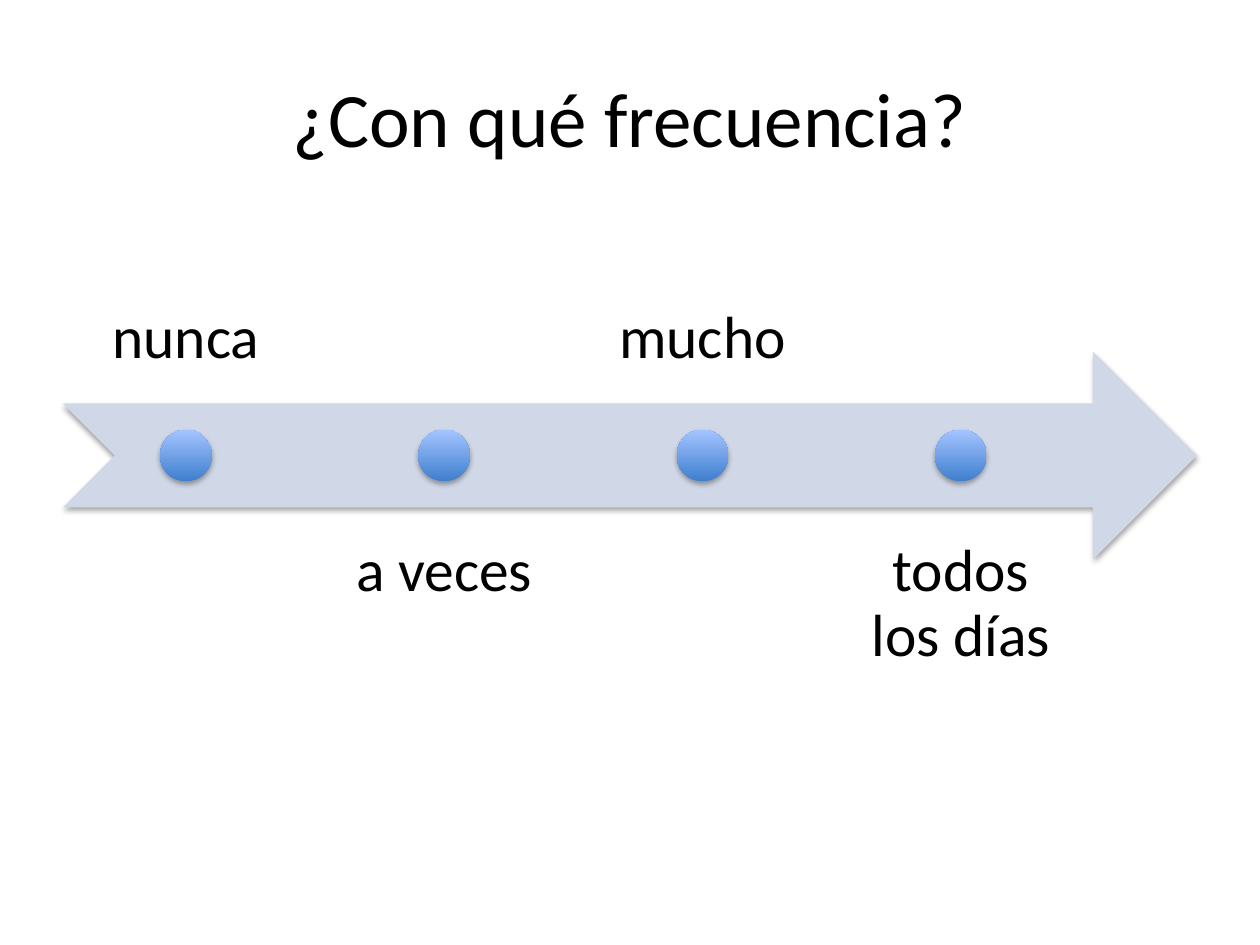
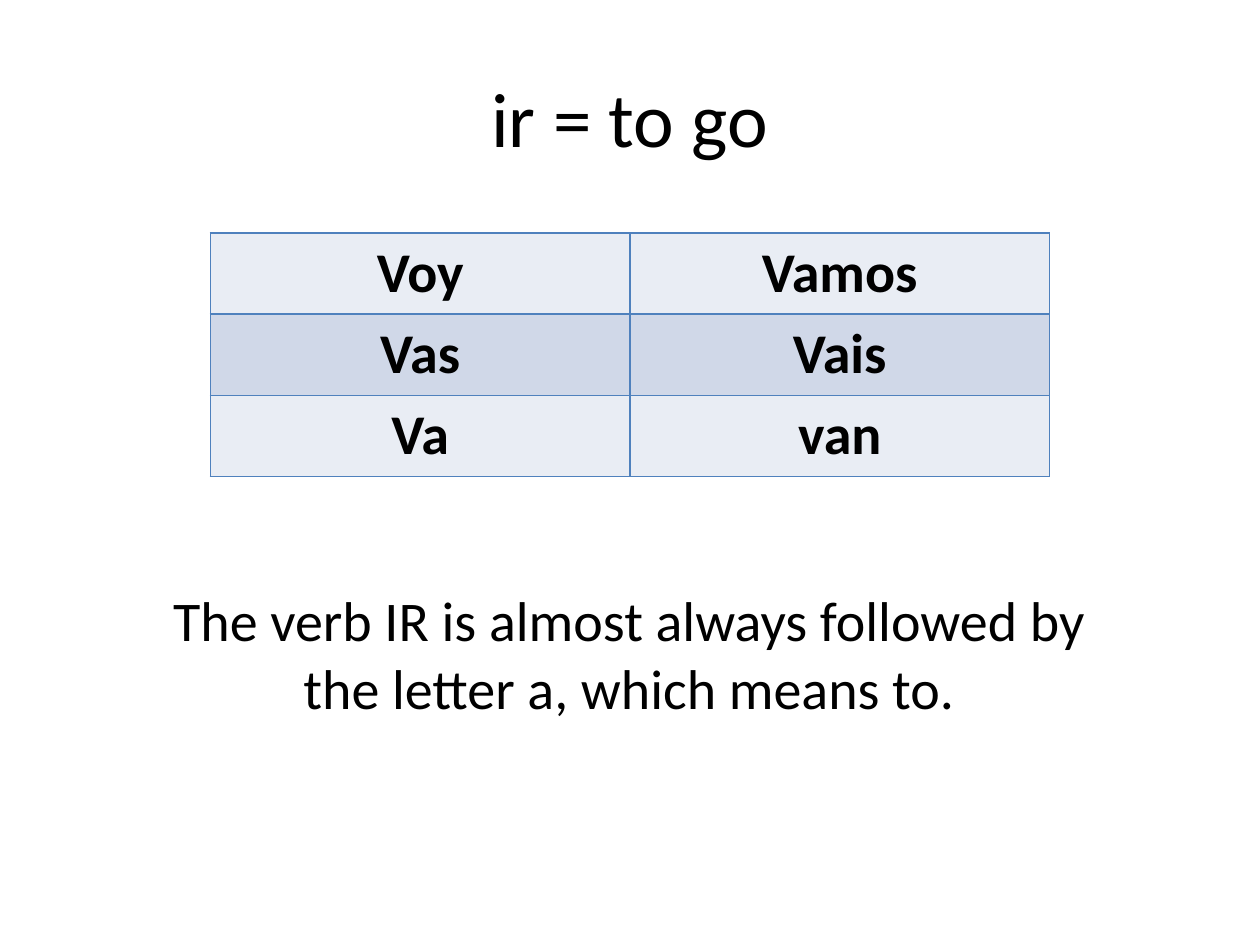
"""Build two Spanish lesson slides: a frequency scale and the verb ir."""
from dataclasses import dataclass

from lxml.etree import SubElement
from pptx import Presentation
from pptx.dml.color import RGBColor
from pptx.enum.shapes import MSO_SHAPE
from pptx.enum.text import MSO_ANCHOR, PP_ALIGN
from pptx.oxml.ns import qn
from pptx.util import Inches, Pt


@dataclass(frozen=True)
class Theme:
    font: str = "Calibri"
    text: str = "000000"
    background: str = "FFFFFF"
    band_dark: str = "D0D8E8"
    band_light: str = "E9EDF4"
    border: str = "4F81BD"
    dot_bottom: str = "3F7FCE"
    dot_top: str = "A4C4FF"
    title_size: int = 44
    label_size: int = 34
    body_size: int = 32


@dataclass(frozen=True)
class Box:
    left: float
    top: float
    width: float
    height: float

    def lengths(self) -> tuple:
        return tuple(Inches(side) for side in (self.left, self.top, self.width, self.height))


@dataclass(frozen=True)
class Frequency:
    label: str
    above: bool


THEME = Theme()
TITLE_BOX = Box(0.5, 0.3, 9, 1.25)
ARROW_BOX = Box(0.5, 2.79, 9, 1.65)
NOTE_BOX = Box(1.21, 4.6, 7.57, 1.18)
LABEL_WIDTH, LABEL_STEP, LABEL_INSET = 1.95, 2.05, 0.26
LABEL_TOP_ABOVE, LABEL_TOP_BELOW = 1.55, 4.03
DOT_SIZE = 0.41
TABLE_LEFT, TABLE_TOP = 1.67, 1.85
COLUMN_WIDTH, ROW_HEIGHT = 3.33, 0.64

FREQUENCIES = [
    Frequency("nunca", True),
    Frequency("a veces", False),
    Frequency("mucho", True),
    Frequency("todos los días", False),
]
VERB_FORMS = [("Voy", "Vamos"), ("Vas", "Vais"), ("Va", "van")]


def color(value: str) -> RGBColor:
    return RGBColor.from_string(value)


def write_text(text_frame, text: str, size: int, bold: bool = False):
    """Set centred text in the theme font and return its paragraph."""
    text_frame.text = text
    text_frame.word_wrap = True
    paragraph = text_frame.paragraphs[0]
    paragraph.alignment = PP_ALIGN.CENTER
    for run in paragraph.runs:
        run.font.name = THEME.font
        run.font.size = Pt(size)
        run.font.bold = bold
        run.font.color.rgb = color(THEME.text)
    return paragraph


def add_titled_slide(presentation, title: str):
    """Add a white slide with a formatted title."""
    slide = presentation.slides.add_slide(presentation.slide_layouts[5])
    slide.background.fill.solid()
    slide.background.fill.fore_color.rgb = color(THEME.background)
    shape = slide.shapes.title
    shape.left, shape.top, shape.width, shape.height = TITLE_BOX.lengths()
    write_text(shape.text_frame, title, THEME.title_size)
    shape.text_frame.vertical_anchor = MSO_ANCHOR.MIDDLE
    return slide


def add_shadowed_shape(slide, kind: MSO_SHAPE, box: Box):
    """Add an outline-free shape with a soft shadow below it."""
    shape = slide.shapes.add_shape(kind, *box.lengths())
    shape.line.fill.background()
    shape.shadow.inherit = False
    effects = shape.element.spPr.find(qn("a:effectLst"))
    shadow = SubElement(effects, qn("a:outerShdw"), blurRad=str(Pt(3.1)),
                        dist=str(Pt(1.8)), dir="5400000", rotWithShape="0")
    shade = SubElement(shadow, qn("a:srgbClr"), val=THEME.text)
    SubElement(shade, qn("a:alpha"), val="35000")
    return shape


def add_frequency(slide, index: int, frequency: Frequency) -> None:
    """Add a label and its dot on the arrow."""
    left = ARROW_BOX.left + index * LABEL_STEP
    top = LABEL_TOP_ABOVE if frequency.above else LABEL_TOP_BELOW
    label_box = Box(left, top, LABEL_WIDTH, ARROW_BOX.height)
    text_frame = slide.shapes.add_textbox(*label_box.lengths()).text_frame
    text_frame.margin_left = text_frame.margin_right = Inches(LABEL_INSET)
    text_frame.margin_top = text_frame.margin_bottom = Inches(LABEL_INSET)
    text_frame.vertical_anchor = MSO_ANCHOR.BOTTOM if frequency.above else MSO_ANCHOR.TOP
    write_text(text_frame, frequency.label, THEME.label_size).line_spacing = 0.9

    dot_box = Box(left + (LABEL_WIDTH - DOT_SIZE) / 2,
                  ARROW_BOX.top + (ARROW_BOX.height - DOT_SIZE) / 2, DOT_SIZE, DOT_SIZE)
    dot = add_shadowed_shape(slide, MSO_SHAPE.OVAL, dot_box)
    dot.fill.gradient()
    dot.fill.gradient_angle = 90
    for stop, value in zip(dot.fill.gradient_stops, (THEME.dot_bottom, THEME.dot_top)):
        stop.color.rgb = color(value)


def add_cell_borders(cell) -> None:
    """Draw a one-point line on each side of a cell."""
    properties = cell._tc.get_or_add_tcPr()
    for side in ("a:lnL", "a:lnR", "a:lnT", "a:lnB"):
        line = SubElement(properties, qn(side), w=str(Pt(1)))
        SubElement(SubElement(line, qn("a:solidFill")), qn("a:srgbClr"), val=THEME.border)


def add_verb_table(slide) -> None:
    """Add the banded table of verb forms."""
    rows, columns = len(VERB_FORMS), len(VERB_FORMS[0])
    box = Box(TABLE_LEFT, TABLE_TOP, columns * COLUMN_WIDTH, rows * ROW_HEIGHT)
    table = slide.shapes.add_table(rows, columns, *box.lengths()).table
    table.first_row = table.horz_banding = False
    for row, forms in enumerate(VERB_FORMS):
        for column, form in enumerate(forms):
            cell = table.cell(row, column)
            write_text(cell.text_frame, form, THEME.body_size, bold=True)
            add_cell_borders(cell)
            cell.fill.solid()
            cell.fill.fore_color.rgb = color(THEME.band_dark if row % 2 else THEME.band_light)


def build_frequency_slide(presentation) -> None:
    slide = add_titled_slide(presentation, "¿Con qué frecuencia?")
    arrow = add_shadowed_shape(slide, MSO_SHAPE.NOTCHED_RIGHT_ARROW, ARROW_BOX)
    arrow.fill.solid()
    arrow.fill.fore_color.rgb = color(THEME.band_dark)
    for index, frequency in enumerate(FREQUENCIES):
        add_frequency(slide, index, frequency)


def build_verb_slide(presentation) -> None:
    slide = add_titled_slide(presentation, "ir = to go")
    add_verb_table(slide)
    note = slide.shapes.add_textbox(*NOTE_BOX.lengths())
    write_text(note.text_frame,
               "The verb IR is almost always followed by the letter a, which means to.",
               THEME.body_size)


def main() -> None:
    presentation = Presentation()
    presentation.slide_width, presentation.slide_height = Inches(10), Inches(7.5)
    build_frequency_slide(presentation)
    build_verb_slide(presentation)
    presentation.save("out.pptx")


if __name__ == "__main__":
    main()
